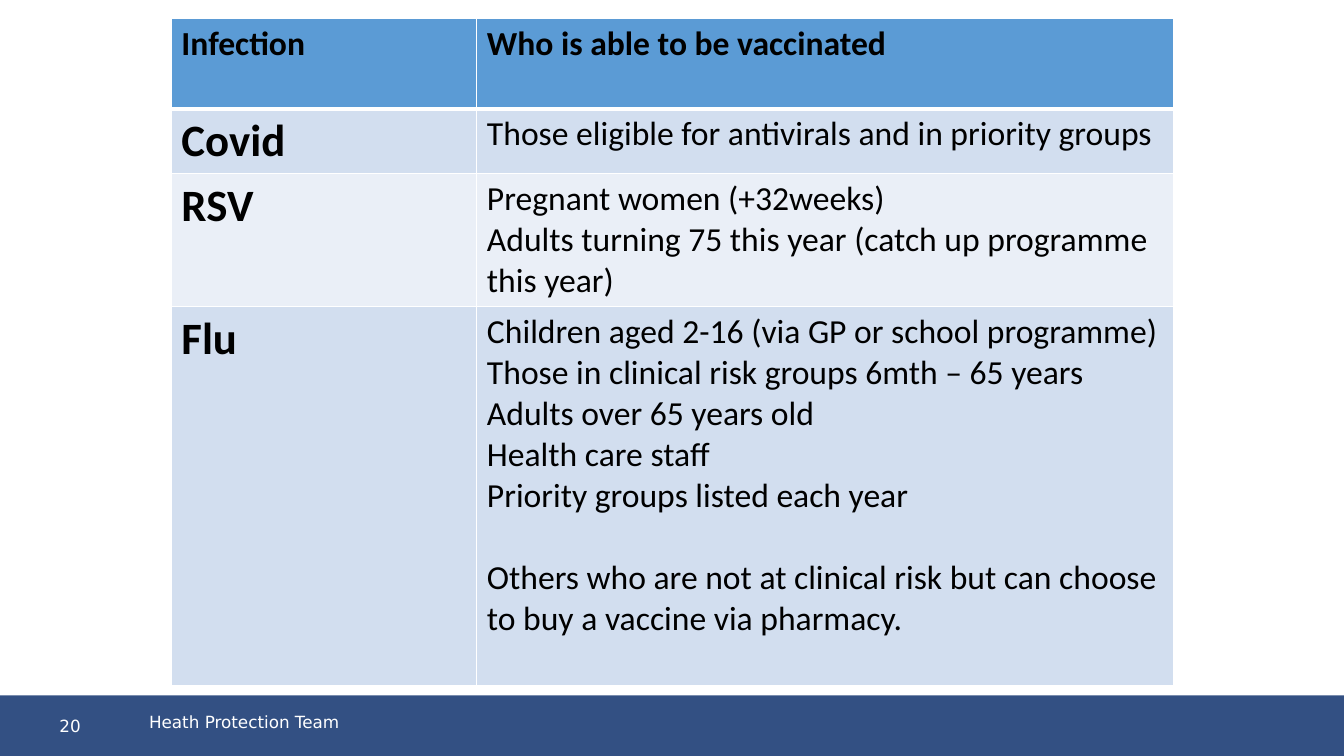
from lxml import etree
from pptx import Presentation
from pptx.dml.color import RGBColor
from pptx.enum.shapes import MSO_SHAPE
from pptx.enum.text import MSO_ANCHOR, PP_ALIGN
from pptx.oxml.ns import qn
from pptx.util import Inches, Pt

RECT = MSO_SHAPE.RECTANGLE
MIDDLE = MSO_ANCHOR.MIDDLE
LEFT = PP_ALIGN.LEFT

WIDTH, HEIGHT = 13.33, 7.5
BAR = 0.92 * HEIGHT
COLS = [3.03, 6.91]
ROWS = [0.9, 0.64, 1.32, 3.76]
FILLS = ["5B9BD5", "D2DEEF", "EAEFF7", "D2DEEF"]
GAP = 29.3

DATA = [
    ("Infection", ["Who is able to be vaccinated"]),
    ("Covid", ["Those eligible for antivirals and in priority groups"]),
    ("RSV", [
        "Pregnant women (+32weeks)",
        "Adults turning 75 this year (catch up programme this year)",
    ]),
    ("Flu", [
        "Children aged 2-16 (via GP or school programme)",
        "Those in clinical risk groups 6mth – 65 years",
        "Adults over 65 years old",
        "Health care staff",
        "Priority groups listed each year",
        "Others who are not at clinical risk but can choose to buy a vaccine via pharmacy.",
    ]),
]


def color(code):
    return RGBColor.from_string(code)


def style(frame, size, face, code, bold=False):
    for para in frame.paragraphs:
        para.alignment = LEFT
        for run in para.runs:
            font = run.font
            font.size, font.name, font.bold = Pt(size), face, bold
            font.color.rgb = color(code)


def border(cell, widths):
    props = cell._tc.get_or_add_tcPr()
    for side, width in zip("LRTB", widths):
        line = etree.SubElement(props, qn(f"a:ln{side}"), w=str(Pt(width)))
        fill = etree.SubElement(line, qn("a:solidFill"))
        etree.SubElement(fill, qn("a:srgbClr"), val="FFFFFF")


def fill_cell(cell, text, size, bold, back, widths):
    cell.text_frame.text = text
    style(cell.text_frame, size, "Calibri", "000000", bold)
    border(cell, widths)
    cell.fill.solid()
    cell.fill.fore_color.rgb = color(back)


def add_grid(slide):
    frame = slide.shapes.add_table(
        len(ROWS), len(COLS), Inches(1.7), Inches(0.18),
        Inches(sum(COLS)), Inches(sum(ROWS)))
    table = frame.table
    for col, width in zip(table.columns, COLS):
        col.width = Inches(width)
    for row, height in zip(table.rows, ROWS):
        row.height = Inches(height)
    for i, (name, lines) in enumerate(DATA):
        head = i == 0
        widths = [1, 1, 3 if i == 1 else 1, 3 if head else 1]
        fill_cell(table.cell(i, 0), name, 24 if head else 32, True, FILLS[i], widths)
        fill_cell(table.cell(i, 1), "\n".join(lines), 24, head, FILLS[i], widths)
    last = table.cell(len(ROWS) - 1, 1).text_frame.paragraphs[-1]
    last.space_before = Pt(GAP)


def add_bar(slide, text):
    bar = slide.shapes.add_shape(
        RECT, 0, Inches(BAR), Inches(WIDTH), Inches(HEIGHT - BAR))
    bar.shadow.inherit = False
    bar.fill.solid()
    bar.fill.fore_color.rgb = color("335083")
    bar.line.fill.background()
    frame = bar.text_frame
    frame.margin_left = Inches(0.59)
    frame.margin_top = frame.margin_bottom = 0
    frame.vertical_anchor = MIDDLE
    frame.text = text
    style(frame, 12, "DejaVu Sans", "FFFFFF")


def add_label(slide, text):
    box = slide.shapes.add_textbox(
        Inches(1.38), Inches(7.01), Inches(11.17), Inches(0.49))
    frame = box.text_frame
    frame.word_wrap = True
    frame.text = text
    style(frame, 12, "DejaVu Sans", "FFFFFF")


def main():
    deck = Presentation()
    deck.slide_width, deck.slide_height = Inches(WIDTH), Inches(HEIGHT)
    slide = deck.slides.add_slide(deck.slide_layouts[6])
    add_grid(slide)
    add_bar(slide, "20")
    add_label(slide, "Heath Protection Team")
    deck.save("out.pptx")


if __name__ == "__main__":
    main()
